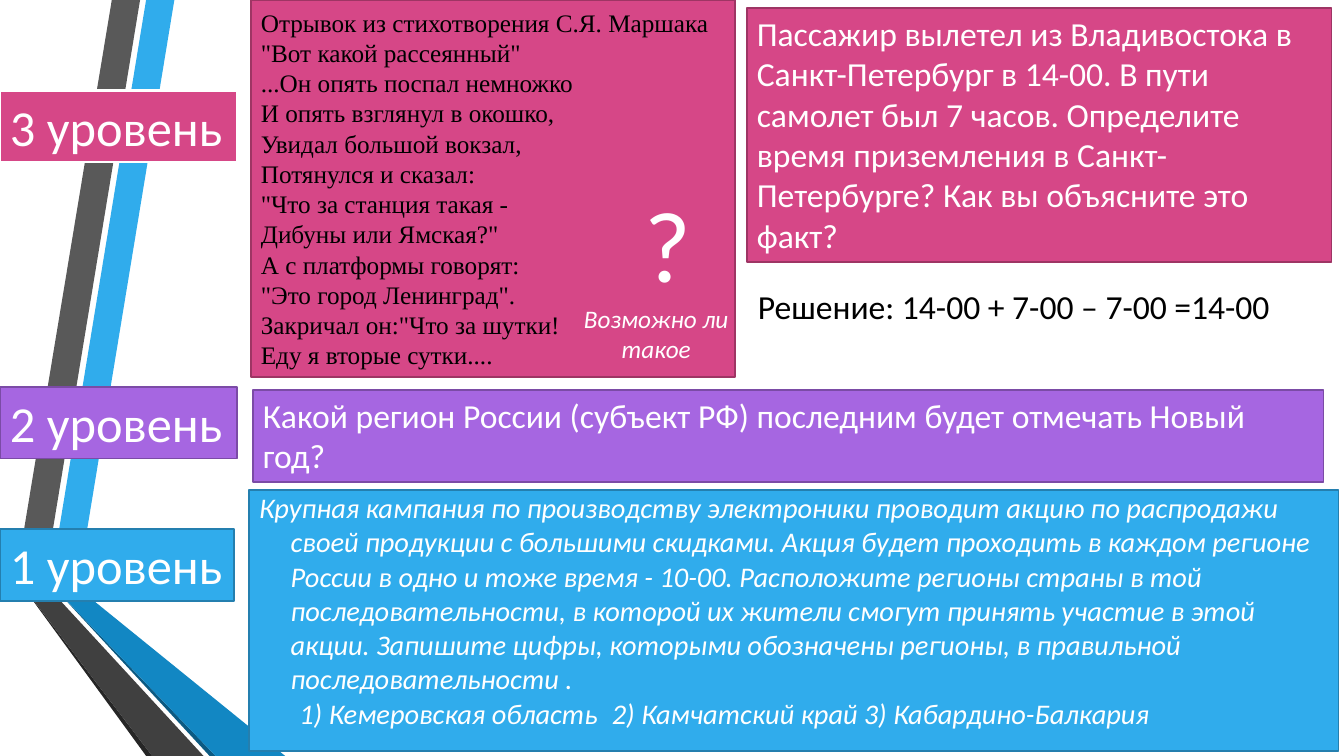
import pptx
import pptx.dml.color
import pptx.enum.shapes
import pptx.enum.text
import pptx.oxml.ns
import pptx.util
import lxml.etree

THEME = {
    "blue": "30ACEC", "blue_line": "247FAF", "blue_shade": "1287C3", "blue_edge": "0C5A82",
    "gray": "595959", "gray_shade": "404040", "gray_edge": "262626",
    "purple": "A666E1", "purple_line": "7B4BA6",
    "pink": "D64787", "pink_line": "9E3564",
    "white": "FFFFFF", "black": "000000",
    "sans": "Calibri", "serif": "Times New Roman",
    "level": 36, "question": 24, "task": 20.3, "small": 18, "mark": 72,
}

presentation = pptx.Presentation()
presentation.slide_width = pptx.util.Inches(13.333)
presentation.slide_height = pptx.util.Inches(7.5)
COLUMN = presentation.slide_width / 40
ROW = presentation.slide_height / 30
ANCHOR = pptx.enum.text.MSO_ANCHOR
ALIGN = pptx.enum.text.PP_ALIGN

slide = presentation.slides.add_slide(presentation.slide_layouts[1])
title, task = slide.placeholders
title.element.getparent().remove(title.element)


def paint(shape, fill, line=None, line_width=1.25):
    shape.fill.solid()
    shape.fill.fore_color.rgb = pptx.dml.color.RGBColor.from_string(THEME[fill])
    if line:
        shape.line.color.rgb = pptx.dml.color.RGBColor.from_string(THEME[line])
        shape.line.width = pptx.util.Pt(line_width)
    else:
        shape.line.fill.background()


def write(shape, text, size, color="white", font="sans", italic=False,
          align=ALIGN.LEFT, anchor=ANCHOR.TOP, wrap=True):
    """Fill the shape with one paragraph per line of text."""
    frame = shape.text_frame
    frame.text = text
    frame.word_wrap = wrap
    frame.auto_size = pptx.enum.text.MSO_AUTO_SIZE.NONE
    frame.vertical_anchor = anchor
    for paragraph in frame.paragraphs:
        paragraph.alignment = align
        for run in paragraph.runs:
            run.font.size = pptx.util.Pt(THEME[size])
            run.font.name = THEME[font]
            run.font.italic = italic
            run.font.color.rgb = pptx.dml.color.RGBColor.from_string(THEME[color])


# Ribbons: corners as (column, row)
ribbons = [
    ("blue", [(1.5, 23.12), (2.31, 23.32), (5.19, 0), (4.35, 0)]),
    ("gray", [(4.17, 0), (3.33, 0), (0.48, 22.92), (1.32, 23.08)]),
    ("gray_edge", [(0.48, 22.92), (4.35, 30), (4.53, 30)]),
    ("blue_edge", [(1.5, 23.16), (6.24, 30), (6.42, 30)]),
    ("blue_shade", [(1.5, 23.12), (1.5, 23.16), (6.42, 30), (8.49, 30), (2.31, 23.32)]),
    ("gray_shade", [(6.06, 30), (1.44, 23.32), (1.29, 23.12), (1.32, 23.08),
                    (0.48, 22.92), (4.53, 30)]),
]
for color, corners in ribbons:
    points = [(round(column * COLUMN), round(row * ROW)) for column, row in corners]
    builder = slide.shapes.build_freeform(*points[0])
    builder.add_line_segments(points[1:], close=True)
    ribbon = builder.convert_to_shape()
    ribbon.shadow.inherit = False
    paint(ribbon, color)

# Level 1 task, above the ribbons
task.element.getparent().append(task.element)
task.left, task.width = round(7.41 * COLUMN), round(32.43 * COLUMN)
task.top, task.height = round(19.44 * ROW), round(10.36 * ROW)
paint(task, "blue", "blue_line")
write(task, "Крупная кампания по производству электроники проводит акцию по распродажи "
      "своей продукции с большими скидками. Акция будет проходить в каждом регионе России "
      "в одно и тоже время - 10-00. Расположите регионы страны в той последовательности, "
      "в которой их жители смогут принять участие в этой акции. Запишите цифры, которыми "
      "обозначены регионы, в правильной последовательности .\n"
      "1) Кемеровская область\t2) Камчатский край\t3) Кабардино-Балкария",
      "task", italic=True)
task.text_frame.margin_top = 0
indents = [(0.94, -0.94), (0, 1.2)]
for paragraph, (margin, indent) in zip(task.text_frame.paragraphs, indents):
    paragraph.space_before = pptx.util.Pt(0)
    paragraph.line_spacing = pptx.util.Pt(24.5)
    properties = paragraph._p.get_or_add_pPr()
    properties.set("marL", str(round(margin * COLUMN)))
    properties.set("indent", str(round(indent * COLUMN)))
    lxml.etree.SubElement(properties, pptx.oxml.ns.qn("a:buNone"))
tabs = lxml.etree.SubElement(properties, pptx.oxml.ns.qn("a:tabLst"))
for stop in (10.98, 19.08):
    lxml.etree.SubElement(tabs, pptx.oxml.ns.qn("a:tab"),
                          pos=str(round(stop * COLUMN)), algn="l")

verse = """Отрывок из стихотворения С.Я. Маршака
"Вот какой рассеянный"
...Он опять поспал немножко
И опять взглянул в окошко,
Увидал большой вокзал,
Потянулся и сказал:
"Что за станция такая -
Дибуны или Ямская?"
А с платформы говорят:
"Это город Ленинград".
Закричал он:"Что за шутки!
Еду я вторые сутки...."""
flight = ("Пассажир вылетел из Владивостока в Санкт-Петербург в 14-00. В пути самолет был "
          "7 часов. Определите время приземления в Санкт-Петербурге? Как вы объясните это факт?")
region = "Какой регион России (субъект РФ) последним будет отмечать Новый год?"

# Each box: left, top, width, height in columns and rows; paint; text; text format
level = {"size": "level", "wrap": False}
boxes = [
    ((0, 21, 6.96, 2.84), ("blue", "blue_line"), "1 уровень", level),
    ((0, 15.36, 7.05, 2.84), ("purple", "purple_line"), "2 уровень", level),
    ((7.53, 15.48, 31.86, 3.64), ("purple", "purple_line"), region, {"size": "question"}),
    ((0, 3.6, 7.05, 2.84), ("pink", "white", 1.75), "3 уровень", level),
    ((22.23, 0.32, 17.4, 10.08), ("pink", "pink_line"), flight, {"size": "question"}),
    ((7.47, 0, 14.4, 14.96), ("pink", "pink_line"), verse,
     {"size": "small", "color": "black", "font": "serif", "anchor": ANCHOR.MIDDLE}),
    ((18.9, 7, 1.98, 5.24), None, "?", {"size": "mark", "wrap": False}),
    ((16.98, 11.84, 5.1, 2.84), None, "Возможно ли\nтакое",
     {"size": "small", "italic": True, "align": ALIGN.CENTER}),
    ((22.26, 11.16, 17.34, 2), None, "Решение: 14-00 + 7-00 – 7-00 =14-00",
     {"size": "question", "color": "black"}),
]
for (left, top, width, height), colors, text, text_format in boxes:
    place = (round(left * COLUMN), round(top * ROW),
             round(width * COLUMN), round(height * ROW))
    if colors:
        box = slide.shapes.add_shape(pptx.enum.shapes.MSO_SHAPE.RECTANGLE, *place)
        box.shadow.inherit = False
        paint(box, *colors)
    else:
        box = slide.shapes.add_textbox(*place)
    write(box, text, **text_format)

presentation.save("out.pptx")
